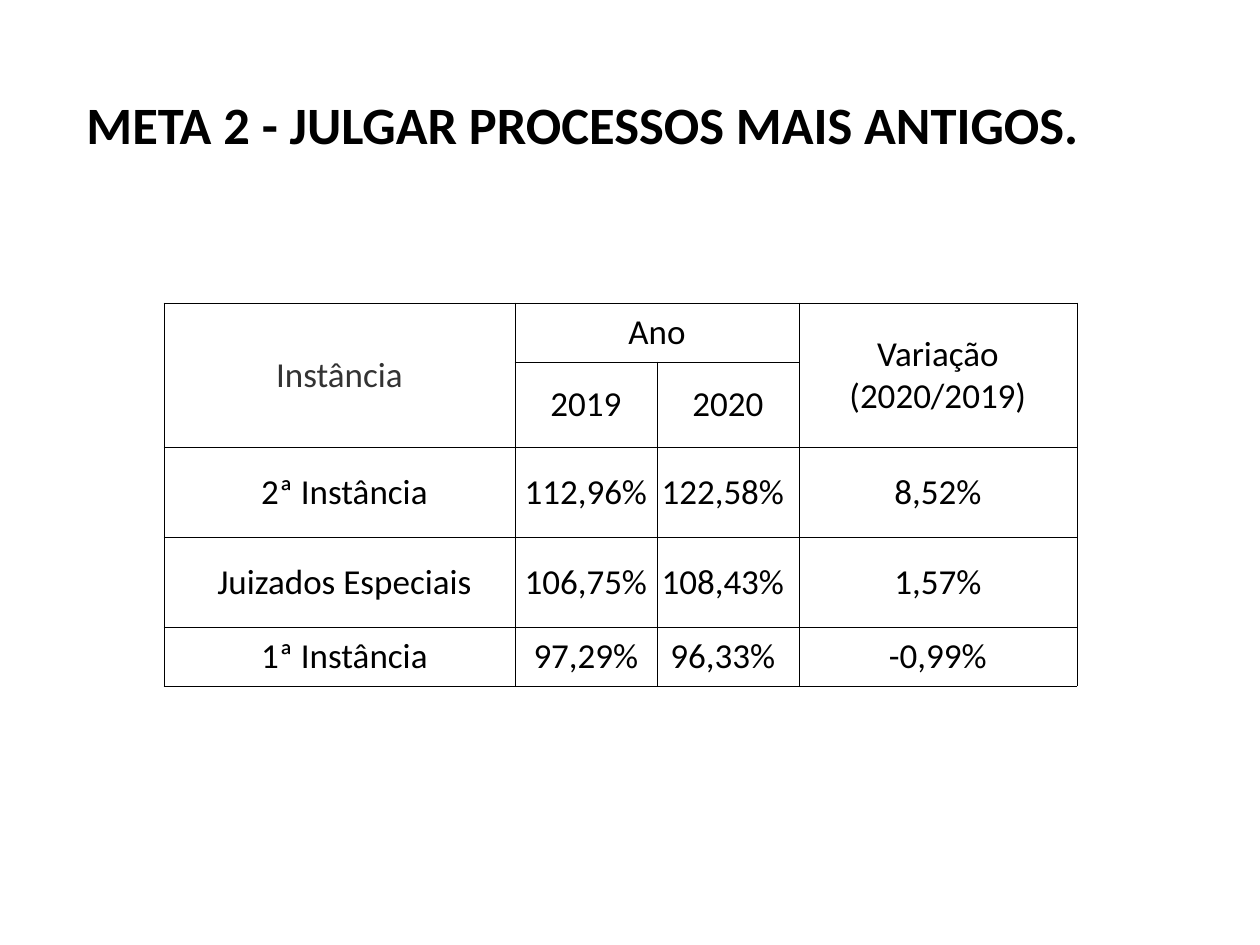
from lxml import etree
from pptx import Presentation
from pptx import util as u
from pptx.dml.color import RGBColor
from pptx.enum import text
from pptx.oxml.ns import qn

PX = 914400 // 126  # EMU per px
THEME = dict(font="Calibri", ink="000000", muted="333333", title=30, body=20, rule=0.5)


def write(frame, words, size=THEME["body"], color=THEME["ink"], bold=False,
          align=text.PP_ALIGN.CENTER):
    para = frame.paragraphs[0]
    para.alignment = align
    span = para.add_run()
    span.text = words
    span.font.name = THEME["font"]
    span.font.size = u.Pt(size)
    span.font.bold = bold
    span.font.color.rgb = RGBColor.from_string(color)


def outline(cell):
    props = cell._tc.get_or_add_tcPr()
    for index, side in enumerate(("a:lnL", "a:lnR", "a:lnT", "a:lnB")):
        line = etree.Element(qn(side), w=str(u.Pt(THEME["rule"])))
        fill = etree.SubElement(line, qn("a:solidFill"))
        etree.SubElement(fill, qn("a:srgbClr"), val=THEME["ink"])
        props.insert(index, line)


deck = Presentation()
deck.slide_width, deck.slide_height = 1260 * PX, 945 * PX
page = deck.slides.add_slide(deck.slide_layouts[6])

# Title
box = page.shapes.add_textbox(74 * PX, 86 * PX, 1052 * PX, 77 * PX)
box.text_frame.word_wrap = True
box.text_frame.auto_size = text.MSO_AUTO_SIZE.SHAPE_TO_FIT_TEXT
write(box.text_frame, "META 2 - JULGAR PROCESSOS MAIS ANTIGOS.",
      size=THEME["title"], bold=True, align=text.PP_ALIGN.LEFT)

# Table grid
widths = [351, 142, 142, 278]
heights = [59, 59, 90, 90, 59]
rows = [
    ["Instância", "Ano", "", "Variação (2020/2019)"],
    ["", "2019", "2020", ""],
    ["2ª Instância", "112,96%", "122,58%", "8,52%"],
    ["Juizados Especiais", "106,75%", "108,43%", "1,57%"],
    ["1ª Instância", "97,29%", "96,33%", "-0,99%"],
]
table = page.shapes.add_table(len(rows), len(widths), 164 * PX, 303 * PX,
                              sum(widths) * PX, sum(heights) * PX).table
table.first_row = table.horz_banding = False
for column, width in zip(table.columns, widths):
    column.width = width * PX
for row, height in zip(table.rows, heights):
    row.height = height * PX

# Header spans
for first, last in [((0, 0), (1, 0)), ((0, 1), (0, 2)), ((0, 3), (1, 3))]:
    table.cell(*first).merge(table.cell(*last))

# Cells: body rows indent the first column and pad the 2020 column
for r, values in enumerate(rows):
    for c, value in enumerate(values):
        cell = table.cell(r, c)
        cell.fill.background()
        cell.vertical_anchor = text.MSO_ANCHOR.MIDDLE
        cell.margin_left = (11 if r > 1 and c == 0 else 1) * PX
        cell.margin_right = (11 if r > 1 and c == 2 else 1) * PX
        cell.margin_top, cell.margin_bottom = PX, 0
        outline(cell)
        if value:
            write(cell.text_frame, value,
                  color=THEME["muted" if r == c == 0 else "ink"])

deck.save("out.pptx")
